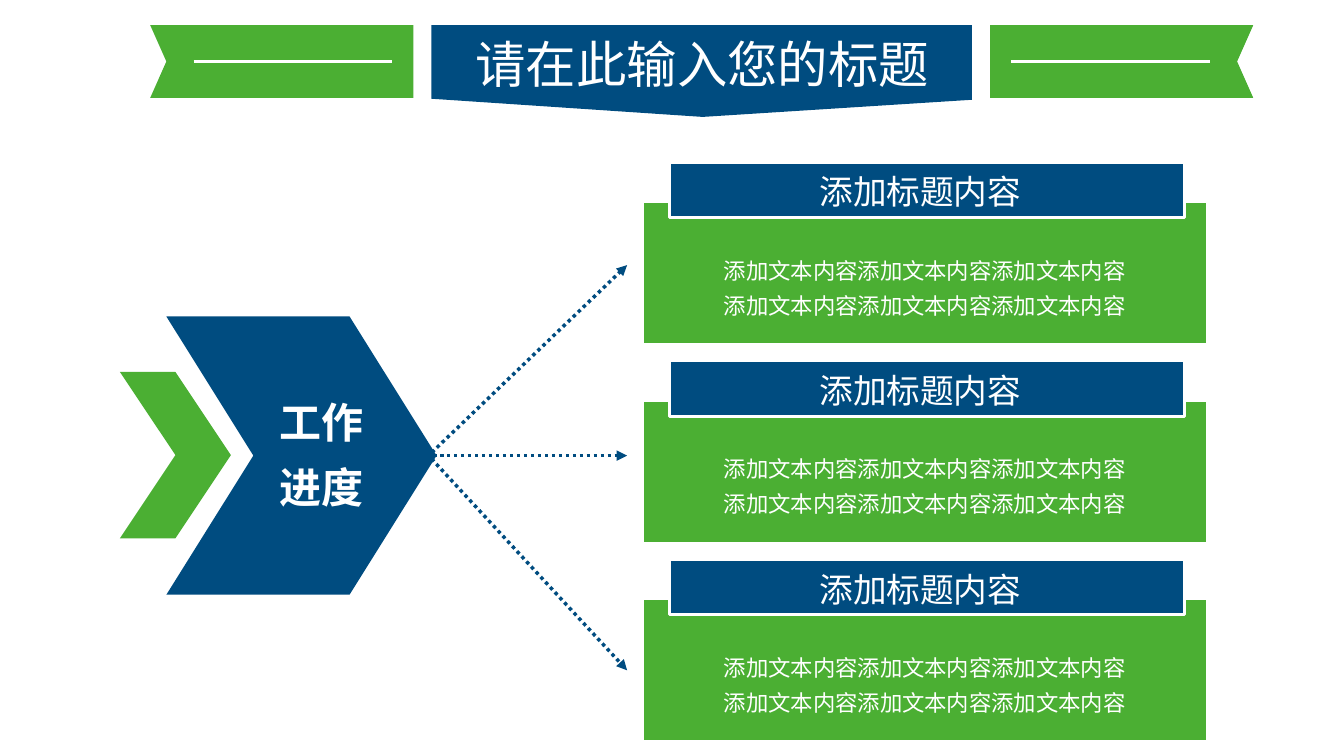
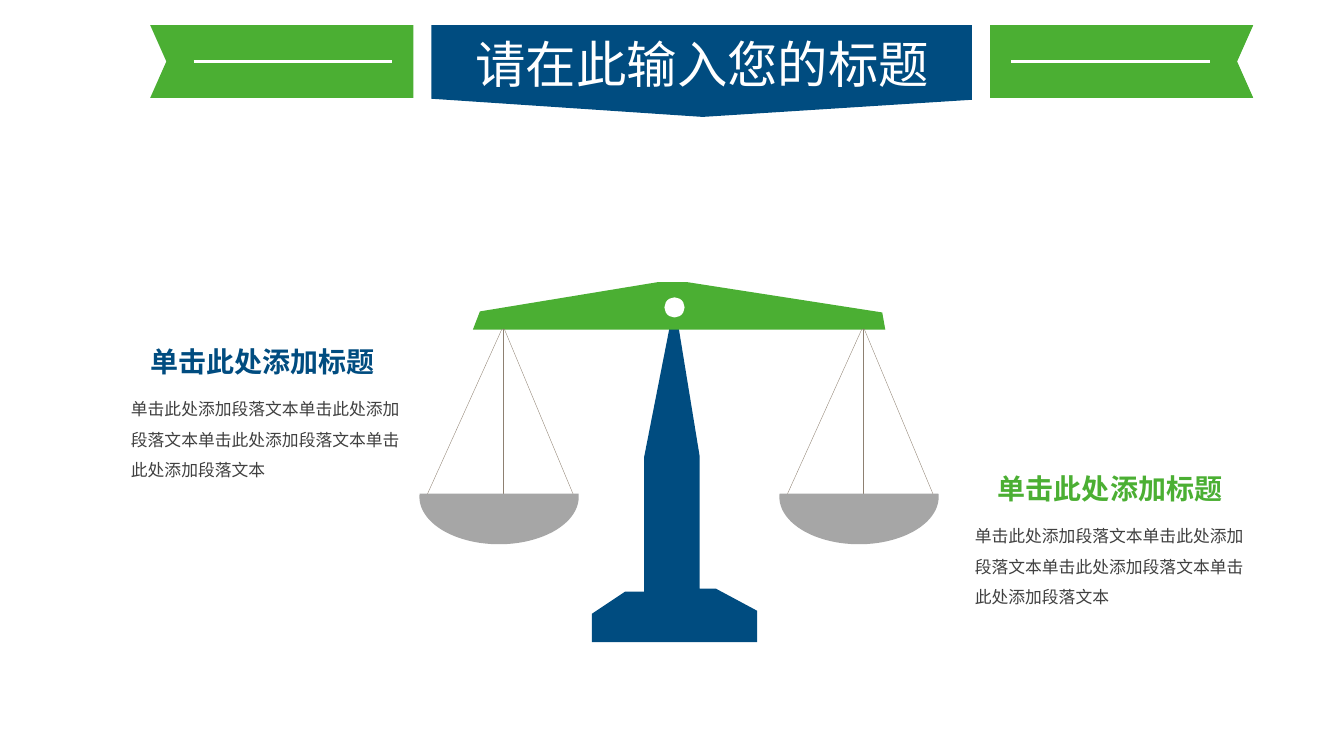
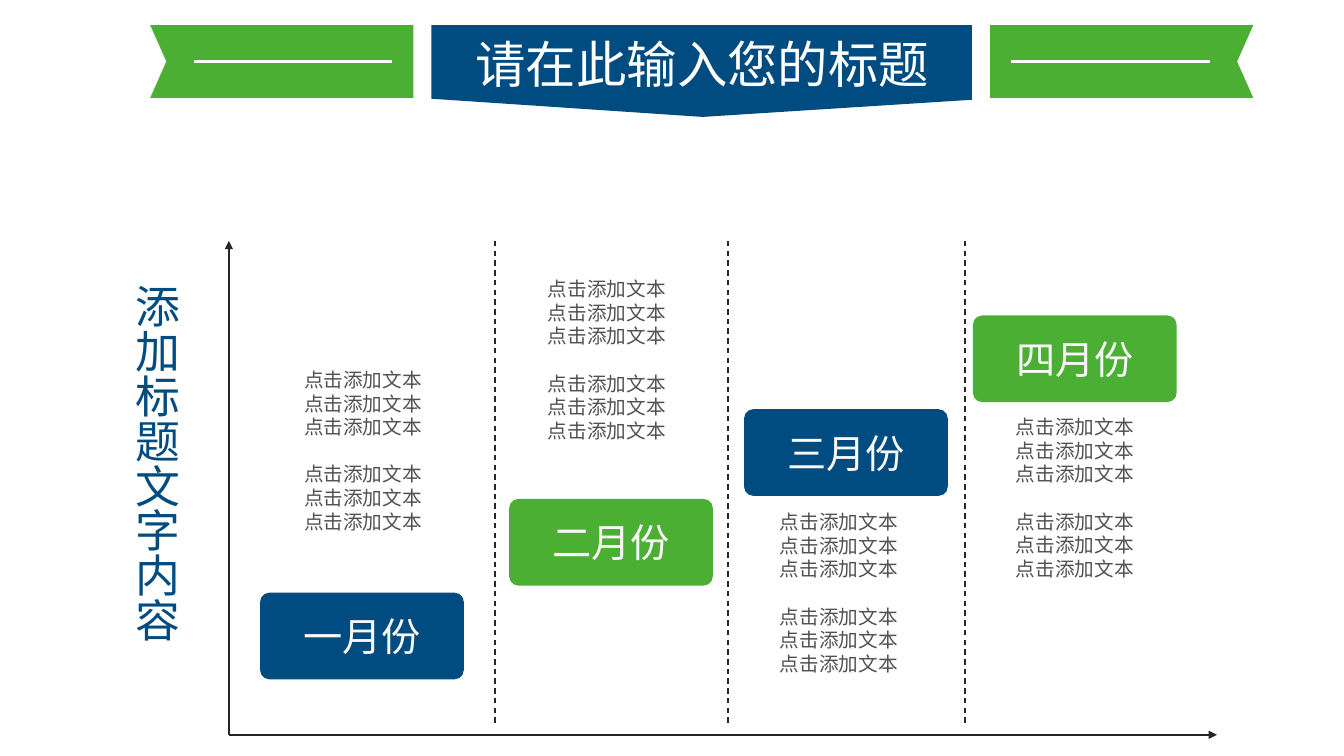
from math import cos, radians, sin

from lxml.etree import SubElement
from pptx import Presentation
from pptx.dml.color import RGBColor
from pptx.enum.dml import MSO_LINE
from pptx.enum.shapes import MSO_CONNECTOR, MSO_SHAPE
from pptx.enum.text import MSO_ANCHOR, MSO_AUTO_SIZE, PP_ALIGN
from pptx.oxml.ns import qn
from pptx.util import Inches, Pt

BLUE, GREEN, GRAY, WHITE = "004C80", "4BAF33", "A6A6A6", "FFFFFF"
INK, BODY, NOTE, STRING, PALE = "262626", "404040", "515151", "8E8071", "F8F8F8"
FONT = "Noto Sans CJK SC"
color = RGBColor.from_string


def draw(slide, form, at, fill=None, line=None, width=1, dash=None, head=None, tail=None):
    """Add an outline (list of points), a line (two ends) or a preset shape (box)."""
    if form == "outline":
        points = [(Inches(x), Inches(y)) for x, y in at]
        builder = slide.shapes.build_freeform(*points[0])
        builder.add_line_segments(points[1:], close=True)
        shape = builder.convert_to_shape()
    elif form == "line":
        shape = slide.shapes.add_connector(MSO_CONNECTOR.STRAIGHT, *map(Inches, at))
    else:
        shape = slide.shapes.add_shape(form, *map(Inches, at))
    if fill:
        shape.fill.solid()
        shape.fill.fore_color.rgb = color(fill)
    if line:
        shape.line.color.rgb = color(line)
        shape.line.width = Pt(width)
    else:
        shape.line.fill.background()
    if dash:
        shape.line.dash_style = dash
    for end, arrow in (("a:headEnd", head), ("a:tailEnd", tail)):
        if arrow:
            SubElement(shape.get_or_add_ln(), qn(end), type=arrow)
    SubElement(shape.element.spPr, qn("a:effectLst"))
    return shape


def write(frame, text, size, ink, bold=False, align=PP_ALIGN.LEFT, spacing=None,
          margins=(0.1, 0.05), wrap=True):
    """Fill a text frame, one paragraph per line of text."""
    frame.text = text
    frame.word_wrap = wrap
    frame.auto_size = MSO_AUTO_SIZE.NONE
    frame.margin_left = frame.margin_right = Inches(margins[0])
    frame.margin_top = frame.margin_bottom = Inches(margins[1])
    for paragraph in frame.paragraphs:
        paragraph.alignment = align
        paragraph.line_spacing = spacing
        for run in paragraph.runs:
            run.font.size, run.font.bold, run.font.name = Pt(size), bold, FONT
            run.font.color.rgb = color(ink)
            SubElement(run.font._element, qn("a:ea"), typeface=FONT)


prs = Presentation()
prs.slide_width, prs.slide_height = Inches(13.33), Inches(7.5)

# Title banner shared by all slides
for _ in range(3):
    slide = prs.slides.add_slide(prs.slide_layouts[5])
    draw(slide, "outline", [(4.28, 0.25), (9.64, 0.25), (9.64, 0.99), (6.97, 1.16),
                            (4.28, 0.98)], BLUE)
    for origin, way in ((0, 1), (13.92, -1)):
        ribbon = [(4.1, 0.25), (1.49, 0.25), (1.65, 0.61), (1.49, 0.97), (4.1, 0.97)]
        draw(slide, "outline", [(origin + way * x, y) for x, y in ribbon], GREEN)
        draw(slide, "line", (origin + way * 1.92, 0.61, origin + way * 3.89, 0.61),
             line=WHITE, width=1.75)
    title = slide.shapes.title
    title.left, title.top, title.width, title.height = map(Inches, (4.59, 0.27, 4.75, 0.71))
    write(title.text_frame, "请在此输入您的标题", 36, WHITE, align=PP_ALIGN.CENTER, wrap=False)
    title.text_frame.vertical_anchor = MSO_ANCHOR.MIDDLE
    slide.shapes.element.append(title.element)  # bring the title in front of the banner

progress, balance, months = prs.slides

# Slide 1: chevrons
for box, fill, notch in (((1.65, 3.14, 2.68, 2.76), BLUE, 0.322),
                         ((1.19, 3.69, 1.1, 1.65), GREEN, 0.5)):
    draw(progress, MSO_SHAPE.CHEVRON, box, fill).adjustments[0] = notch
label = progress.shapes.add_textbox(*map(Inches, (2.67, 3.73, 1.26, 1.4)))
write(label.text_frame, "工作\n进度", 30, WHITE, bold=True, spacing=1.3)

# Slide 1: three cards, each with an arrow
for row, arrow_end in enumerate((2.63, 4.52, 6.65)):
    top = 1.61 + 1.97 * row
    draw(progress, MSO_SHAPE.RECTANGLE, (6.37, top + 0.39, 5.61, 1.42), GREEN, WHITE, 2)
    draw(progress, MSO_SHAPE.RECTANGLE, (6.64, top, 5.11, 0.55), BLUE, WHITE, 2)
    heading = progress.shapes.add_textbox(*map(Inches, (8.03, top - 0.08, 2.36, 0.62)))
    write(heading.text_frame, "添加标题内容", 24, WHITE, spacing=1.3)
    detail = progress.shapes.add_textbox(*map(Inches, (7.08, top + 0.81, 4.25, 0.8)))
    write(detail.text_frame, "\n".join(["添加文本内容" * 3] * 2), 16, WHITE, spacing=1.3)
    draw(progress, "line", (4.25, 4.52, 6.22, arrow_end), line=BLUE, width=2.5,
         dash=MSO_LINE.ROUND_DOT, head="diamond", tail="triangle")

# Slide 2: stand, beam and pivot
draw(balance, "outline", [(6.69, 3), (6.94, 4.53), (6.94, 5.84), (7.1, 5.84), (7.51, 6.06),
                          (7.51, 6.37), (5.87, 6.37), (5.87, 6.09), (6.2, 5.87),
                          (6.39, 5.87), (6.39, 4.53)], BLUE)
draw(balance, "outline", [(4.69, 3.27), (8.78, 3.27), (8.75, 3.1), (6.82, 2.8),
                          (6.52, 2.8), (4.76, 3.09)], GREEN)
draw(balance, MSO_SHAPE.OVAL, (6.59, 2.95, 0.2, 0.2), WHITE)

# Slide 2: pans on three strings
for hook in (4.99, 8.56):
    for start, end, bottom in ((0.01, 0.71, 4.94), (0, 0, 4.93), (-0.01, -0.75, 4.9)):
        draw(balance, "line", (hook + start, 3.26, hook + end, bottom), line=STRING, width=0.25)
    rim = [(hook - 0.04 + 0.79 * cos(radians(angle)), 4.93 + 0.47 * sin(radians(angle)))
           for angle in range(-4, 185, 4)]
    draw(balance, "outline", rim, GRAY)

# Slide 2: one text per side
for left, top, width, body_left, ink in ((1.31, 3.37, 2.59, 1.2, BLUE),
                                         (9.7, 4.63, 2.62, 9.57, GREEN)):
    heading = balance.shapes.add_textbox(*map(Inches, (left, top, width, 0.44)))
    write(heading.text_frame, "单击此处添加标题", 20, ink, bold=True, align=PP_ALIGN.CENTER)
    detail = balance.shapes.add_textbox(*map(Inches, (body_left, top + 0.44, 2.89, 1.01)))
    write(detail.text_frame, "单击此处添加段落文本" * 4, 12, BODY, spacing=1.5)

# Slide 3: axes and dividers
for end in ((2.27, 2.39), (12.07, 7.29)):
    draw(months, "line", (2.27, 7.29, *end), line=INK, tail="triangle")
for x in (4.91, 7.22, 9.57):
    draw(months, "line", (x, 2.39, x, 7.21), line=INK, dash=MSO_LINE.DASH)

# Slide 3: rising months with notes
for month, left, top, note_left, note_top, fill in (
        ("一月份", 2.58, 5.88, 2.74, 3.58, BLUE),
        ("二月份", 5.05, 4.95, 5.16, 2.68, GREEN),
        ("三月份", 7.38, 4.06, 7.46, 4.99, BLUE),
        ("四月份", 9.65, 3.13, 9.8, 4.05, GREEN)):
    step = draw(months, MSO_SHAPE.ROUNDED_RECTANGLE, (left, top, 2.02, 0.86), fill)
    step.adjustments[0] = 0.106
    write(step.text_frame, month, 28, PALE, align=PP_ALIGN.CENTER, margins=(0.13, 0.06))
    note = months.shapes.add_textbox(*map(Inches, (note_left, note_top, 1.72, 1.78)))
    write(note.text_frame, "\n".join(["点击添加文本"] * 6), 14, NOTE,
          align=PP_ALIGN.CENTER, margins=(0.13, 0.07))
    note.text_frame.paragraphs[3].space_before = Pt(17)

# Slide 3: vertical axis title
axis_title = months.shapes.add_textbox(*map(Inches, (1.14, 2.75, 0.81, 3.94)))
write(axis_title.text_frame, "添加标题文字内容", 32, BLUE, margins=(0.13, 0.07))
axis_title.text_frame._txBody.bodyPr.set("vert", "eaVert")

prs.save("out.pptx")
